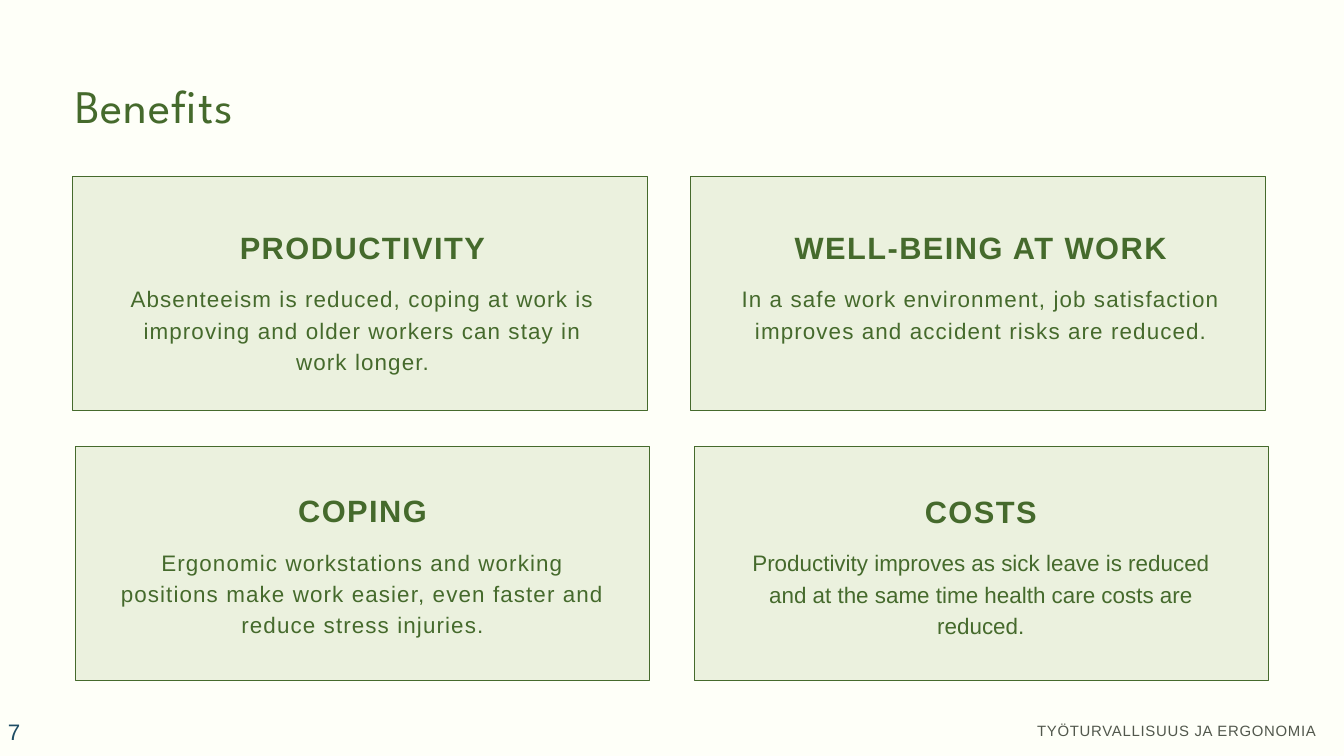
from pptx import Presentation
from pptx.dml.color import RGBColor
from pptx.enum.shapes import MSO_SHAPE as Shape
from pptx.enum.text import MSO_ANCHOR as Anchor, MSO_AUTO_SIZE as AutoSize, PP_ALIGN as Align
from pptx.util import Inches, Pt

CREAM = RGBColor(0xFE, 0xFF, 0xF8)
PALE_GREEN = RGBColor(0xEB, 0xF1, 0xDE)
GREEN = RGBColor(0x45, 0x6A, 0x2C)
GREY = RGBColor(0x52, 0x58, 0x4D)
BLUE = RGBColor(0x1E, 0x4D, 0x65)


def write(box, text, size, color=GREEN, font="Arial", bold=False, align=Align.LEFT,
          line=None, tracking=0.0, inset=(0, 0), anchor=Anchor.TOP):
    """Fill a text box or placeholder with one formatted paragraph."""
    frame = box.text_frame
    frame.word_wrap = True
    frame.auto_size = AutoSize.NONE
    frame.vertical_anchor = anchor
    frame.margin_left = frame.margin_right = Inches(inset[0])
    frame.margin_top = frame.margin_bottom = Inches(inset[1])
    para = frame.paragraphs[0]
    para.alignment = align
    para.space_before = Pt(0)
    if line:
        para.line_spacing = Pt(line)
    span = para.add_run()
    span.text = text
    span.font.name = font
    span.font.size = Pt(size)
    span.font.bold = bold
    span.font.color.rgb = color
    span.font._element.set("spc", str(round(tracking * 100)))


def add_text(left, top, width, height, text, **style):
    box = page.shapes.add_textbox(Inches(left), Inches(top), Inches(width), Inches(height))
    write(box, text, **style)


deck = Presentation()
deck.slide_width, deck.slide_height = Inches(20), Inches(11.25)
page = deck.slides.add_slide(deck.slide_layouts[5])
page.background.fill.solid()
page.background.fill.fore_color.rgb = CREAM

# Title
title = page.shapes.title
title.left, title.top = Inches(1.12), Inches(1.05)
title.width, title.height = Inches(17.71), Inches(0.94)
write(title, "Benefits", size=50, font="League Spartan", line=66.8, tracking=1)

# Benefit cards: card left and top, text left, heading top, tracking of the body, texts
cards = [
    (1.08, 2.62, 1.7, 3.38, 1.2, "PRODUCTIVITY",
     "Absenteeism is reduced, coping at work is improving and older workers "
     "can stay in work longer."),
    (10.28, 2.62, 10.9, 3.38, 1.2, "WELL-BEING AT WORK",
     "In a safe work environment, job satisfaction improves and accident risks "
     "are reduced."),
    (1.12, 6.64, 1.7, 7.3, 1.2, "COPING",
     "Ergonomic workstations and working positions make work easier, even faster "
     "and reduce stress injuries."),
    (10.33, 6.64, 10.9, 7.31, 0, "COSTS",
     "Productivity improves as sick leave is reduced and at the same time health "
     "care costs are reduced."),
]
for left, top, text_left, heading_top, tracking, heading, body in cards:
    card = page.shapes.add_shape(Shape.RECTANGLE, Inches(left), Inches(top),
                                 Inches(8.55), Inches(3.48))
    card.shadow.inherit = False
    card.fill.solid()
    card.fill.fore_color.rgb = PALE_GREEN
    card.line.color.rgb = GREEN
    card.line.width = Pt(0.75)
    add_text(text_left, heading_top, 7.39, 0.56, heading, size=33, bold=True,
             align=Align.CENTER, line=41.2, tracking=1.6)
    add_text(text_left, heading_top + 0.8, 7.39, 1.4, body, size=24,
             align=Align.CENTER, line=33.6, tracking=tracking)

# Footer and page number
add_text(11.33, 10.7, 8.32, 0.29, "TYÖTURVALLISUUS JA ERGONOMIA ", size=16, color=GREY,
         align=Align.RIGHT, line=22.4, tracking=0.8)
add_text(0.02, 10.69, 2.33, 0.4, "7", size=24, color=BLUE, tracking=1.2,
         inset=(0.1, 0.05), anchor=Anchor.MIDDLE)

deck.save("out.pptx")
